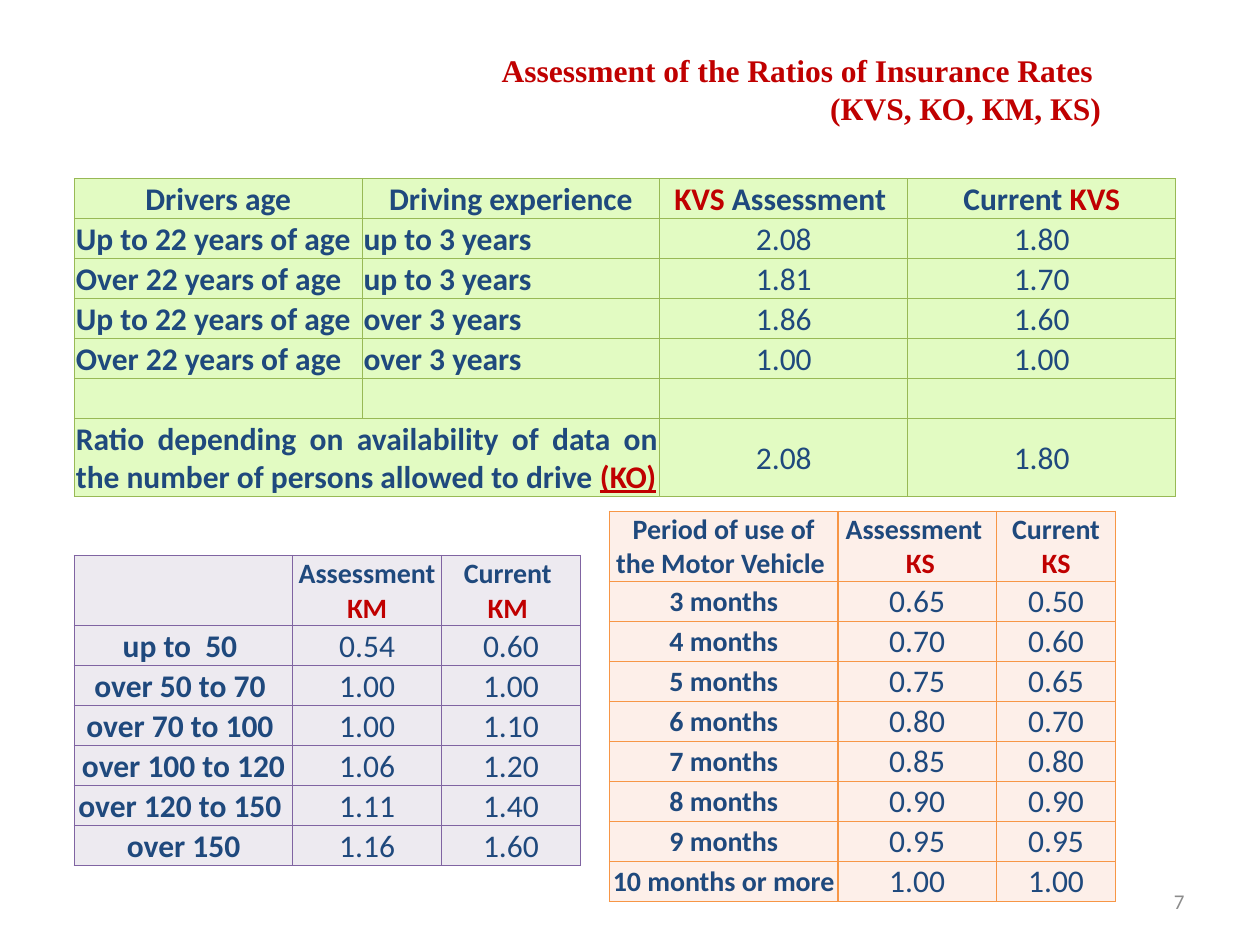
from lxml.etree import SubElement
from pptx import Presentation
from pptx.dml.color import RGBColor
from pptx.enum.text import MSO_ANCHOR, MSO_AUTO_SIZE, PP_ALIGN
from pptx.oxml.ns import qn
from pptx.util import Cm, Pt

NAVY = RGBColor(0x1F, 0x49, 0x7D)
RED = RGBColor(0xC0, 0x00, 0x00)
GRAY = RGBColor(0x8C, 0x8C, 0x8C)
GREEN = RGBColor(0x98, 0xB9, 0x55)
PALE_GREEN = RGBColor(0xE2, 0xFB, 0xC2)
PURPLE = RGBColor(0x80, 0x64, 0xA2)
PALE_PURPLE = RGBColor(0xED, 0xEA, 0xF0)
ORANGE = RGBColor(0xF7, 0x96, 0x46)
PALE_ORANGE = RGBColor(0xFD, 0xEF, 0xE9)

TITLE = "Assessment of the Ratios of Insurance Rates \v (КVS, КО, КМ, КS)"
PAGE_NUMBER = "7"
UNDERLINED = "(KO)"
RATIO_LABEL = ("Ratio depending on availability of data on the number of persons "
               "allowed to drive *(KO)*")

# Text between asterisks is red; a line break starts a new paragraph.
TABLES = [
    {
        "place": (1.5, 3.6),
        "columns": [5.8, 6, 5, 5.4],
        "heights": [0.76] * 7,
        "line": (GREEN, 0.75), "fill": PALE_GREEN,
        "header_size": 18, "label_size": 18,
        "label_columns": 2, "label_alignment": PP_ALIGN.LEFT,
        "rows": [
            ["Drivers age", "Driving experience", "*KVS *Assessment ", "Current *KVS*"],
            ["Up to 22 years of age", "up to 3 years", "2.08", "1.80"],
            ["Over 22 years of age", "up to 3 years", "1.81", "1.70"],
            ["Up to 22 years of age", "over 3 years", "1.86", "1.60"],
            ["Over 22 years of age", "over 3 years", "1.00", "1.00"],
            ["", "", "", ""],
            [RATIO_LABEL, "", "2.08", "1.80"],
        ],
    },
    {
        "place": (1.5, 11.2),
        "columns": [4.4, 3, 2.8],
        "heights": [1.04] + [0.74] * 6,
        "line": (PURPLE, 1), "fill": PALE_PURPLE,
        "header_size": 16, "label_size": 18,
        "label_columns": 1, "label_alignment": PP_ALIGN.CENTER,
        "rows": [
            ["", "Assessment *КМ*", "Current \n*КМ *"],
            ["up to  50 ", "0.54", "0.60"],
            ["over 50 to 70 ", "1.00", "1.00"],
            ["over 70 to 100 ", "1.00", "1.10"],
            ["over 100 to 120", "1.06", "1.20"],
            ["over 120 to 150 ", "1.11", "1.40"],
            ["over 150", "1.16", "1.60"],
        ],
    },
    {
        "place": (12.29, 10.31),
        "columns": [4.6, 3.2, 2.4],
        "heights": [1.27] + [0.69] * 8,
        "line": (ORANGE, 1), "fill": PALE_ORANGE,
        "header_size": 16, "label_size": 16,
        "label_columns": 1, "label_alignment": PP_ALIGN.CENTER,
        "rows": [
            ["Period of use of the Motor Vehicle ", "Assessment \n *КS*", "Current *КS*"],
            ["3 months", "0.65", "0.50"],
            ["4 months", "0.70", "0.60"],
            ["5 months", "0.75", "0.65"],
            ["6 months", "0.80", "0.70"],
            ["7 months", "0.85", "0.80"],
            ["8 months", "0.90", "0.90"],
            ["9 months", "0.95", "0.95"],
            ["10 months or more", "1.00", "1.00"],
        ],
    },
]


def set_format(target, values):
    for name, value in values.items():
        setattr(target, name, value)


def set_font(font, color, **values):
    set_format(font, values)
    font.color.rgb = color


def write_text(text_frame, text, alignment, **font_values):
    for index, line in enumerate(text.split("\n")):
        paragraph = text_frame.add_paragraph() if index else text_frame.paragraphs[0]
        paragraph.alignment = alignment
        for position, part in enumerate(line.split("*")):
            if part:
                run = paragraph.add_run()
                run.text = part
                set_font(run.font, RED if position % 2 else NAVY, name="Calibri",
                         underline=part == UNDERLINED, **font_values)


def add_borders(cell, color, width):
    properties = cell._tc.get_or_add_tcPr()
    for side in ("a:lnL", "a:lnR", "a:lnT", "a:lnB"):
        border = SubElement(properties, qn(side), w=str(Pt(width)))
        fill = SubElement(border, qn("a:solidFill"))
        SubElement(fill, qn("a:srgbClr"), val=str(color))


def add_ratio_table(slide, data):
    rows, columns = data["rows"], data["columns"]
    left, top = data["place"]
    table = slide.shapes.add_table(
        len(rows), len(columns), Cm(left), Cm(top),
        Cm(sum(columns)), Cm(sum(data["heights"]))).table
    for column, width in zip(table.columns, columns):
        column.width = Cm(width)
    for row, height in zip(table.rows, data["heights"]):
        row.height = Cm(height)

    for row_index, texts in enumerate(rows):
        for column_index, text in enumerate(texts):
            cell = table.cell(row_index, column_index)
            set_format(cell, {
                "margin_left": Cm(0.03), "margin_right": Cm(0.03),
                "margin_top": Cm(0.03), "margin_bottom": 0,
                "vertical_anchor": MSO_ANCHOR.MIDDLE})
            add_borders(cell, *data["line"])
            cell.fill.solid()
            cell.fill.fore_color.rgb = data["fill"]

            is_header = row_index == 0
            is_label = column_index < data["label_columns"]
            size, alignment = 18, PP_ALIGN.CENTER
            if is_header:
                size = data["header_size"]
            elif is_label:
                size, alignment = data["label_size"], data["label_alignment"]
            if text == RATIO_LABEL:
                alignment = PP_ALIGN.JUSTIFY
                cell.merge(table.cell(row_index, column_index + 1))
            write_text(cell.text_frame, text, alignment,
                       size=Pt(size), bold=is_header or is_label)


def main():
    presentation = Presentation()
    presentation.slide_width = Cm(25.4)
    presentation.slide_height = Cm(19.05)
    slide = presentation.slides.add_slide(presentation.slide_layouts[5])

    number_box = slide.shapes.add_textbox(Cm(18.2), Cm(17.66), Cm(5.93), Cm(1.01))
    number_box.text_frame.text = PAGE_NUMBER
    title = slide.shapes.title
    set_format(title, {"left": Cm(6.9), "top": Cm(0.92),
                       "width": Cm(15.55), "height": Cm(1.75)})
    title.text_frame.text = TITLE

    for shape, color, values in (
            (number_box, GRAY, {"name": "Calibri", "size": Pt(12)}),
            (title, RED, {"name": "Times New Roman", "size": Pt(18), "bold": True})):
        set_format(shape.text_frame, {
            "word_wrap": True, "auto_size": MSO_AUTO_SIZE.NONE,
            "vertical_anchor": MSO_ANCHOR.MIDDLE})
        paragraph = shape.text_frame.paragraphs[0]
        paragraph.alignment = PP_ALIGN.RIGHT
        for run in paragraph.runs:
            set_font(run.font, color, **values)

    for data in TABLES:
        add_ratio_table(slide, data)

    presentation.save("out.pptx")


if __name__ == "__main__":
    main()
